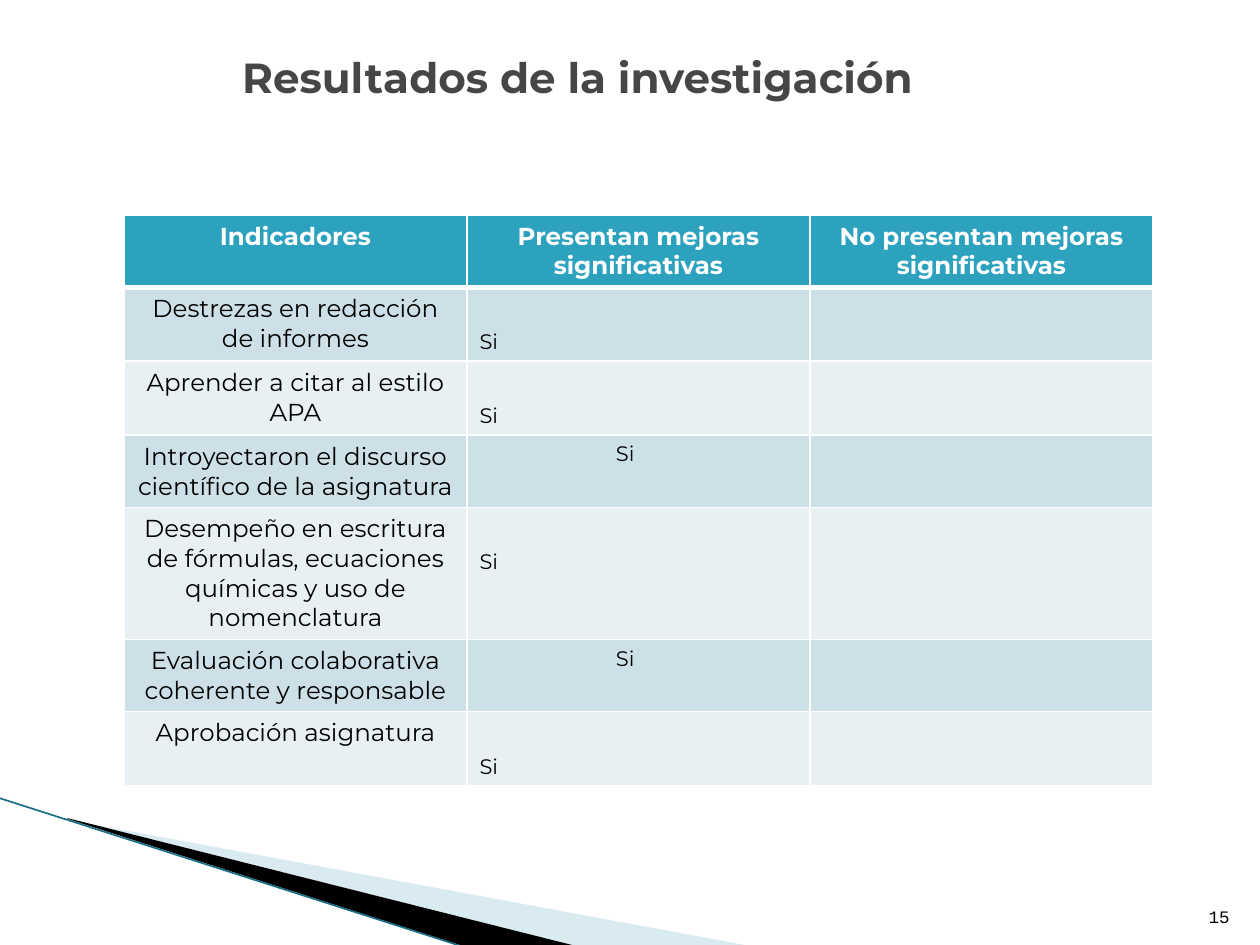
from lxml import etree
from pptx import Presentation
from pptx import util as u
from pptx.dml.color import RGBColor
from pptx.enum import shapes, text
from pptx.oxml import ns

SCALE = 914400 / 126
FONT = "Montserrat"
HEADS = ["Indicadores", "Presentan mejoras significativas",
         "No presentan mejoras significativas"]
# Label, row height, whether the answer sits on the second line
ROWS = [
    ("Destrezas en redacción de informes", 74, True),
    ("Aprender a citar al estilo APA", 74, True),
    ("Introyectaron el discurso científico de la asignatura", 72, False),
    ("Desempeño en escritura de fórmulas, ecuaciones químicas "
     "y uso de nomenclatura", 132, True),
    ("Evaluación colaborativa coherente y responsable", 72, False),
    ("Aprobación asignatura", 74, True),
]
BANDS = ["CDE0E8", "E8F0F4"]


def px(n):
    return u.Emu(round(n * SCALE))


def rgb(code):
    return RGBColor.from_string(code)


def put(frame, words, size, color="000000", bold=False,
        align=text.PP_ALIGN.LEFT, name=FONT):
    frame.text = words
    para = frame.paragraphs[0]
    para.alignment = align
    font = para.runs[0].font
    font.name, font.size, font.bold = name, u.Pt(size), bold
    font.color.rgb = rgb(color)


def wedge(slide, points, color, alpha=None):
    """Add a filled outline, with alpha as its opacity in percent."""
    spots = [(px(x), px(y)) for x, y in points]
    build = slide.shapes.build_freeform(*spots[0], scale=1.0)
    build.add_line_segments(spots[1:], close=True)
    shape = build.convert_to_shape()
    shape.shadow.inherit = False
    shape.line.fill.background()
    shape.fill.solid()
    shape.fill.fore_color.rgb = rgb(color)
    if alpha:
        tint = shape.fill._xPr.find(".//" + ns.qn("a:srgbClr"))
        etree.SubElement(tint, ns.qn("a:alpha"), val=str(alpha * 1000))


def rule(slide, start, end, color, width):
    line = slide.shapes.add_connector(
        shapes.MSO_CONNECTOR.STRAIGHT, *map(px, start + end))
    line.line.color.rgb = rgb(color)
    line.line.width = u.Pt(width)
    etree.SubElement(line._element.spPr, ns.qn("a:effectLst"))


def paint(cell, color, top=1, low=1):
    """Fill a cell and give it white borders."""
    props = cell._tc.get_or_add_tcPr()
    for side, width in zip("LRTB", (1, 1, top, low)):
        edge = etree.SubElement(props, ns.qn("a:ln" + side),
                                w=str(u.Pt(width)))
        fill = etree.SubElement(edge, ns.qn("a:solidFill"))
        etree.SubElement(fill, ns.qn("a:srgbClr"), val="FFFFFF")
    cell.fill.solid()
    cell.fill.fore_color.rgb = rgb(color)


def results(slide):
    high = [72] + [row[1] for row in ROWS]
    table = slide.shapes.add_table(
        len(high), len(HEADS), px(124), px(215), px(1029),
        px(sum(high))).table
    for row, size in zip(table.rows, high):
        row.height = px(size)
    for cell, head in zip(table.rows[0].cells, HEADS):
        paint(cell, "2DA2BF", low=3)
        put(cell.text_frame, head, 14, "FFFFFF", True,
            text.PP_ALIGN.CENTER)
    for i, (label, _, lower) in enumerate(ROWS):
        cells = list(table.rows[i + 1].cells)
        for cell in cells:
            paint(cell, BANDS[i % 2], top=1 if i else 3)
        put(cells[0].text_frame, label, 14, align=text.PP_ALIGN.CENTER)
        put(cells[1].text_frame, "Si", 12)
        if lower:
            cells[1].margin_top = px(42)
        else:
            cells[1].margin_left = px(149)


def title(slide, words):
    head = slide.shapes.title
    head.left, head.top, head.width, head.height = map(
        px, (63, 38, 1029, 77))
    head.text_frame.vertical_anchor = text.MSO_ANCHOR.MIDDLE
    put(head.text_frame, words, 24, "464646", True, text.PP_ALIGN.CENTER)


def number(slide, words):
    box = slide.shapes.add_textbox(*map(px, (1192, 883, 50, 50)))
    frame = box.text_frame
    frame.word_wrap = True
    frame.vertical_anchor = text.MSO_ANCHOR.BOTTOM
    put(frame, words, 10, align=text.PP_ALIGN.RIGHT, name="Courier New")


def main():
    deck = Presentation()
    deck.slide_width, deck.slide_height = px(1260), px(945)
    slide = deck.slides.add_slide(deck.slide_layouts[5])
    wedge(slide, [(69, 820), (750, 946), (575, 946), (69, 819)],
          "A0CBDC", 40)
    wedge(slide, [(67, 818), (576, 946), (469, 948), (68, 819)], "000000")
    rule(slide, (-1, 798), (467, 948), "1B6F85", 0.95)
    results(slide)
    number(slide, "15")
    title(slide, "Resultados de la investigación")
    deck.save("out.pptx")


if __name__ == "__main__":
    main()
